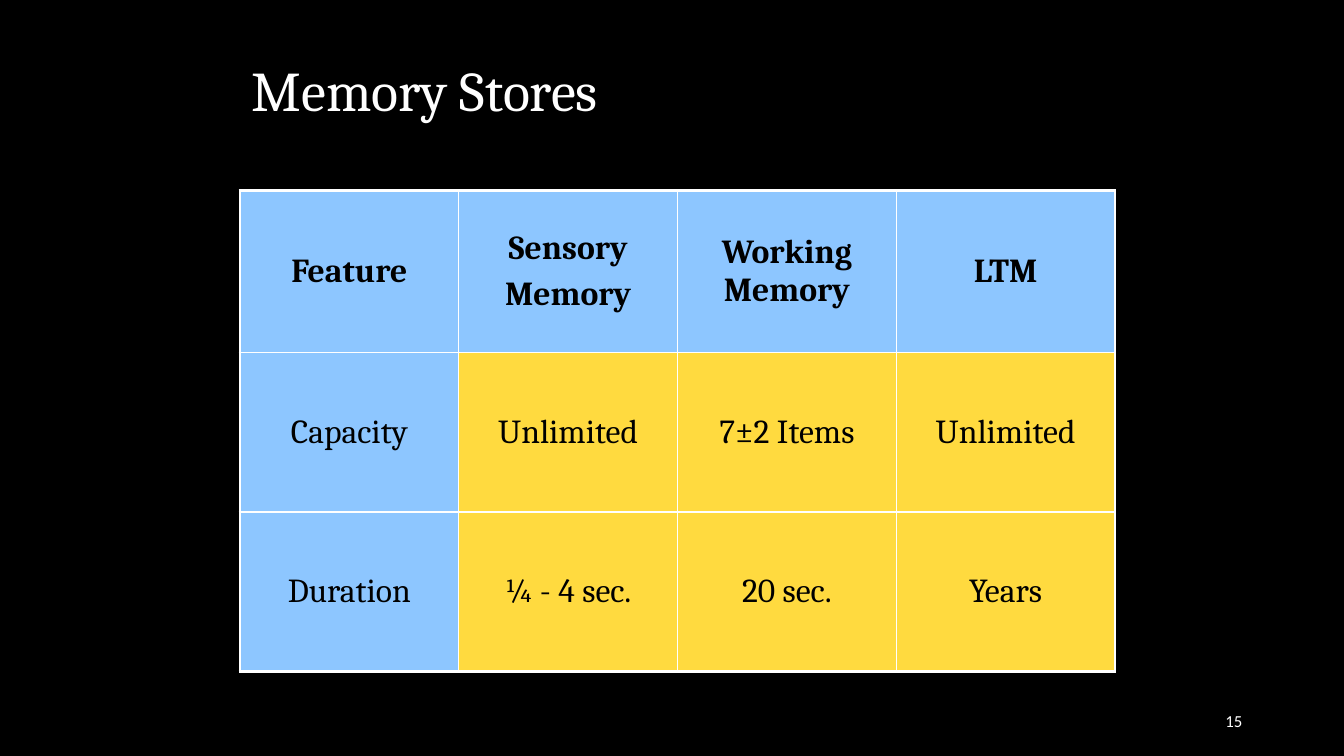
"""Build the Memory Stores slide: a table comparing three kinds of memory."""
from lxml.etree import SubElement
from pptx import Presentation
from pptx.dml.color import RGBColor
from pptx.enum.text import MSO_ANCHOR, PP_ALIGN
from pptx.oxml.ns import qn
from pptx.util import Inches, Pt

BLACK = RGBColor(0x00, 0x00, 0x00)
WHITE = RGBColor(0xFF, 0xFF, 0xFF)
BLUE = RGBColor(0x8D, 0xC6, 0xFF)
YELLOW = RGBColor(0xFF, 0xDA, 0x3F)
OUTER, INNER = Pt(2.25), Pt(1)

MEMORY_STORES = [
    ["Feature", "Sensory\nMemory", "Working Memory", "LTM"],
    ["Capacity", "Unlimited", "7±2 Items", "Unlimited"],
    ["Duration", "¼ - 4 sec.", "20 sec.", "Years"],
]
ROW_HEIGHTS = [1.61, 1.58, 1.58]
COLUMN_WIDTH = 2.17


def add_label(text, left, top, width, height, font_name, size):
    box = slide.shapes.add_textbox(Inches(left), Inches(top), Inches(width), Inches(height))
    box.text_frame.word_wrap = True
    box.text_frame.vertical_anchor = MSO_ANCHOR.MIDDLE
    line = box.text_frame.paragraphs[0]
    line.text = text
    line.font.name, line.font.size = font_name, Pt(size)
    line.font.color.rgb = WHITE
    return line


def add_border(cell, side, width):
    border = SubElement(cell._tc.get_or_add_tcPr(), qn(f"a:ln{side}"), w=str(width))
    SubElement(SubElement(border, qn("a:solidFill")), qn("a:srgbClr"), val=str(WHITE))


prs = Presentation()
prs.slide_width, prs.slide_height = Inches(13.33), Inches(7.5)
slide = prs.slides.add_slide(prs.slide_layouts[6])
slide.background.fill.solid()
slide.background.fill.fore_color.rgb = BLACK

title = add_label("Memory Stores", 2.4, 0.3, 8.5, 1.25, "Cambria", 40)
title.line_spacing = 0.9
page_number = add_label("15", 9.42, 6.95, 3, 0.4, "Calibri", 12)
page_number.alignment = PP_ALIGN.RIGHT

last_row, last_column = len(MEMORY_STORES) - 1, len(MEMORY_STORES[0]) - 1
table = slide.shapes.add_table(
    last_row + 1, last_column + 1, Inches(2.38), Inches(1.89),
    Inches(COLUMN_WIDTH * (last_column + 1)), Inches(sum(ROW_HEIGHTS)),
).table
for column in table.columns:
    column.width = Inches(COLUMN_WIDTH)

for r, entries in enumerate(MEMORY_STORES):
    table.rows[r].height = Inches(ROW_HEIGHTS[r])
    for c, entry in enumerate(entries):
        cell = table.cell(r, c)
        edges = {"L": c == 0, "R": c == last_column, "T": r == 0, "B": r == last_row}
        for side, is_outer in edges.items():
            add_border(cell, side, OUTER if is_outer else INNER)
        cell.fill.solid()
        cell.fill.fore_color.rgb = BLUE if r == 0 or c == 0 else YELLOW
        cell.vertical_anchor = MSO_ANCHOR.MIDDLE
        cell.text = entry
        for line in cell.text_frame.paragraphs:
            line.alignment = PP_ALIGN.CENTER
            line.space_before = Pt(4.8)
            line.font.name, line.font.size = "Cambria", Pt(24)
            line.font.bold = r == 0
            line.font.color.rgb = BLACK

prs.save("out.pptx")
